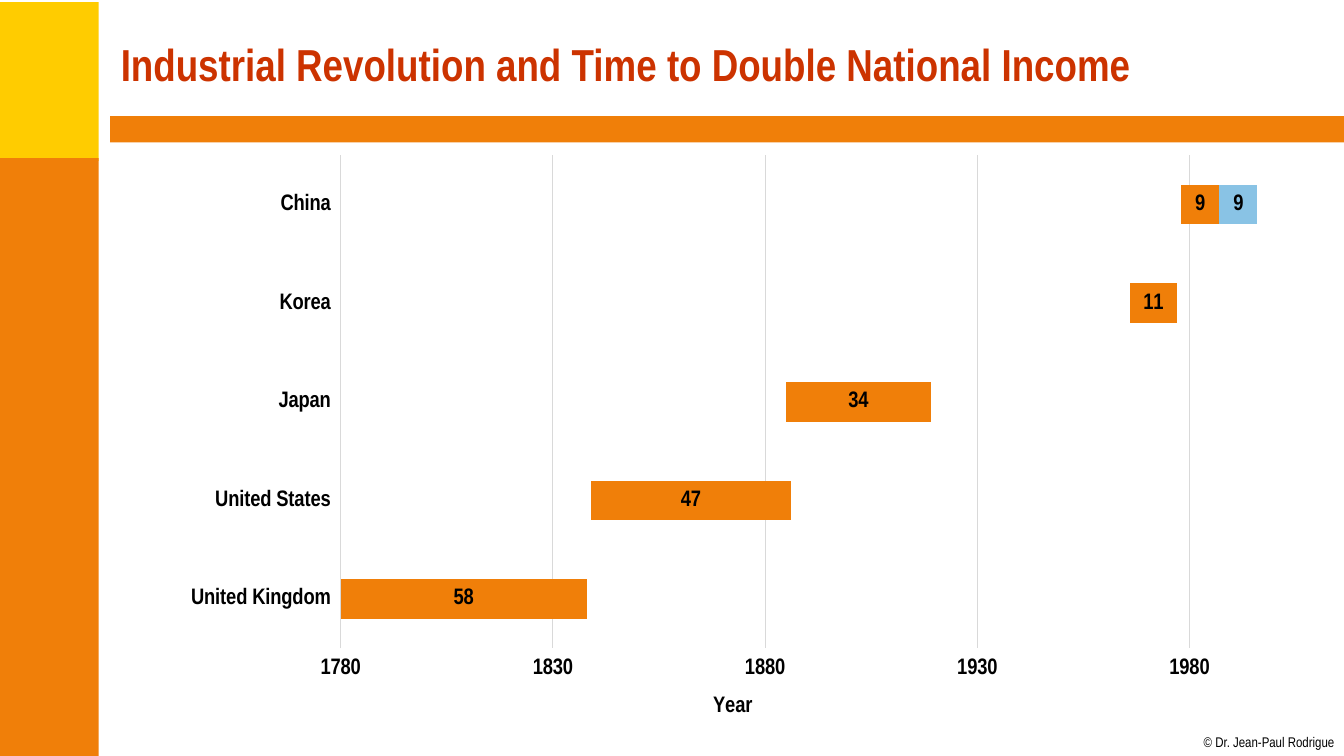
from pptx import Presentation
from pptx.chart.data import CategoryChartData
from pptx.dml.color import RGBColor
from pptx.enum.chart import XL_CHART_TYPE, XL_LEGEND_POSITION, XL_TICK_LABEL_POSITION, XL_TICK_MARK
from pptx.enum.shapes import MSO_SHAPE
from pptx.enum.text import MSO_ANCHOR, PP_ALIGN
from pptx.oxml import parse_xml
from pptx.oxml.ns import nsdecls
from pptx.util import Pt

BAR_STACKED = XL_CHART_TYPE.BAR_STACKED
LABELS_LOW = XL_TICK_LABEL_POSITION.LOW
NO_TICKS = XL_TICK_MARK.NONE
RECTANGLE = MSO_SHAPE.RECTANGLE
MIDDLE, TOP = MSO_ANCHOR.MIDDLE, MSO_ANCHOR.TOP
LEFT, RIGHT = PP_ALIGN.LEFT, PP_ALIGN.RIGHT

COLORS = {
    "yellow": "FFCC00",
    "orange": "F07F09",
    "blue": "89C3E5",
    "red": "CC3300",
    "black": "000000",
    "grid": "D9D9D9",
}
FONT_NAME = "Arial Narrow"
COUNTRIES = ["United Kingdom", "United States", "Japan", "Korea", "China"]
SERIES = [
    ("Start year", [1780, 1839, 1885, 1966, 1978], None),
    ("First doubling", [58, 47, 34, 11, 9], "orange"),
    ("Second doubling", [None, None, None, None, 9], "blue"),
]
PLOT_LAYOUT = {"x": 0.19, "y": 0.02, "w": 0.77, "h": 0.85}
PLOT_LAYOUT.update(y=0.019, w=0.772, h=0.845)


def rgb(color):
    """Return the colour with the given name."""
    return RGBColor.from_string(COLORS[color])


def set_attributes(target, values):
    """Set each named attribute of the target."""
    for name, value in values.items():
        setattr(target, name, value)


def format_font(font, size, color="black", bold=True):
    """Apply the slide font with a size, colour and weight."""
    set_attributes(font, {"name": FONT_NAME, "size": Pt(size), "bold": bold})
    font.color.rgb = rgb(color)


def format_line(line):
    """Draw a thin grey line."""
    line.width = Pt(0.75)
    line.color.rgb = rgb("grid")


def add_block(slide, left, top, width, height, color):
    """Add a plain filled rectangle."""
    shape = slide.shapes.add_shape(RECTANGLE, Pt(left), Pt(top), Pt(width), Pt(height))
    shape.shadow.inherit = False
    shape.fill.solid()
    shape.fill.fore_color.rgb = rgb(color)
    shape.line.fill.background()


def add_text(slide, box, text, frame_values, alignment, **font_values):
    """Add a text box with one paragraph."""
    shape = slide.shapes.add_textbox(*map(Pt, box))
    set_attributes(shape.text_frame, frame_values)
    paragraph = shape.text_frame.paragraphs[0]
    paragraph.alignment = alignment
    run = paragraph.add_run()
    run.text = text
    format_font(run.font, **font_values)


def set_plot_layout(chart):
    """Fix the inner plot area as fractions of the chart."""
    plot_area = chart.element.xpath("c:chart/c:plotArea")[0]
    for layout in plot_area.xpath("c:layout"):
        plot_area.remove(layout)
    modes = "".join(f'<c:{key}Mode val="edge"/>' for key in "xy")
    sizes = "".join(f'<c:{key} val="{value}"/>' for key, value in PLOT_LAYOUT.items())
    plot_area.insert(0, parse_xml(
        f'<c:layout {nsdecls("c")}><c:manualLayout><c:layoutTarget val="inner"/>'
        f"{modes}{sizes}</c:manualLayout></c:layout>"
    ))


def format_axes(chart):
    """Format the country axis and the year axis."""
    for axis in (chart.category_axis, chart.value_axis):
        set_attributes(axis, {
            "major_tick_mark": NO_TICKS,
            "minor_tick_mark": NO_TICKS,
            "tick_label_position": LABELS_LOW,
        })
        format_font(axis.tick_labels.font, 16)
    format_line(chart.category_axis.format.line)
    years = chart.value_axis
    set_attributes(years, {
        "minimum_scale": 1780,
        "maximum_scale": 2000,
        "major_unit": 50,
        "has_major_gridlines": True,
    })
    set_attributes(years.tick_labels, {"number_format": "0", "number_format_is_linked": False})
    format_line(years.major_gridlines.format.line)
    years.format.line.fill.background()
    title = years.axis_title.text_frame
    title.text = "Year"
    format_font(title.paragraphs[0].runs[0].font, 16)


def format_series(series, color):
    """Fill and label a series, or hide it when it has no colour."""
    fill = series.format.fill
    if color is None:
        fill.background()
        return
    fill.solid()
    fill.fore_color.rgb = rgb(color)
    series.data_labels.show_value = True
    format_font(series.data_labels.font, 16)


def add_timeline_chart(slide, left, top, width, height):
    """Add the floating bars that show the doubling periods."""
    data = CategoryChartData()
    data.categories = COUNTRIES
    for name, values, _ in SERIES:
        data.add_series(name, values)
    frame = slide.shapes.add_chart(BAR_STACKED, Pt(left), Pt(top), Pt(width), Pt(height), data)
    chart = frame.chart
    set_attributes(chart, {"has_title": False, "has_legend": False})
    format_font(chart.font, 16)
    plot = chart.plots[0]
    set_attributes(plot, {"gap_width": 150, "overlap": 100, "vary_by_categories": False})
    for series, (_, _, color) in zip(plot.series, SERIES):
        format_series(series, color)
    format_axes(chart)
    set_plot_layout(chart)


def main():
    """Build and save the slide."""
    presentation = Presentation()
    set_attributes(presentation, {"slide_width": Pt(960), "slide_height": Pt(540)})
    slide = presentation.slides.add_slide(presentation.slide_layouts[6])
    add_block(slide, -1.5, 1.5, 72, 113.5, "yellow")
    add_block(slide, -1.5, 113, 72, 427, "orange")
    add_block(slide, 78.75, 83, 881.25, 18.75, "orange")
    no_margins = dict.fromkeys(("margin_left", "margin_top", "margin_right", "margin_bottom"), 0)
    add_text(slide, (859, 524, 94, 12.5), "© Dr. Jean-Paul Rodrigue",
             {"word_wrap": False, "vertical_anchor": TOP, **no_margins}, RIGHT,
             size=10, bold=False)
    add_text(slide, (79.2, 8, 864, 75), "Industrial Revolution and Time to Double National Income",
             {"word_wrap": True, "vertical_anchor": MIDDLE}, LEFT, size=32, color="red")
    add_timeline_chart(slide, 79.2, 103, 864, 417)
    presentation.save("out.pptx")


if __name__ == "__main__":
    main()
